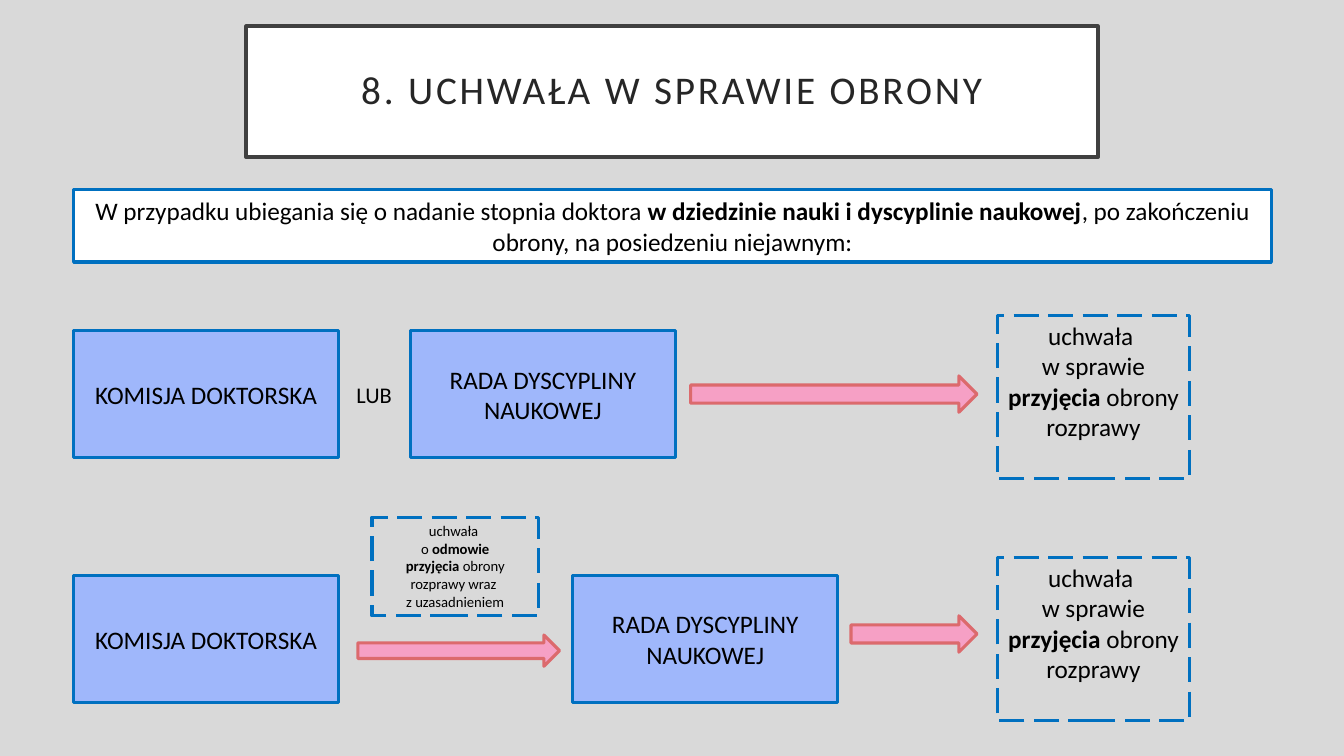
from dataclasses import dataclass

from pptx import Presentation
from pptx.dml.color import RGBColor
from pptx.enum.dml import MSO_LINE
from pptx.enum.shapes import MSO_SHAPE
from pptx.enum.text import MSO_ANCHOR, MSO_AUTO_SIZE, PP_ALIGN
from pptx.util import Inches, Pt

RECT = MSO_SHAPE.RECTANGLE
ARROW = MSO_SHAPE.RIGHT_ARROW
LONG_DASH = MSO_LINE.LONG_DASH
TOP = MSO_ANCHOR.TOP
MIDDLE = MSO_ANCHOR.MIDDLE
CENTER = PP_ALIGN.CENTER
NO_AUTOFIT = MSO_AUTO_SIZE.NONE


@dataclass(frozen=True)
class Theme:
    font: str = "Calibri"
    background: str = "D9D9D9"
    white: str = "FFFFFF"
    black: str = "000000"
    title_text: str = "262626"
    title_line: str = "404040"
    blue: str = "0070C0"
    body_fill: str = "9FB7FB"
    arrow_fill: str = "F6A0C5"
    arrow_line: str = "DC6A6D"
    title_size: float = 28
    body_size: float = 18
    label_size: float = 16
    small_size: float = 10.5
    title_width: float = 2.5
    line_width: float = 2.25


@dataclass(frozen=True)
class Run:
    text: str
    bold: bool = False


Paragraphs = tuple[tuple[Run, ...], ...]
THEME = Theme()


@dataclass(frozen=True)
class Box:
    left: float
    top: float
    width: float
    height: float
    text: Paragraphs = ()
    fill: str | None = None
    line: str | None = THEME.blue
    size: float = THEME.body_size
    anchor: MSO_ANCHOR = MIDDLE
    dashed: bool = False
    kind: MSO_SHAPE = RECT


def body(left: float, top: float, name: str) -> Box:
    return Box(left, top, 2.63, 1.26, ((Run(name),),), THEME.body_fill)


def resolution(left: float, top: float, width: float, height: float,
               text: Paragraphs, size: float = THEME.body_size) -> Box:
    return Box(left, top, width, height, text, size=size, anchor=TOP, dashed=True)


def arrow(left: float, top: float, width: float, height: float) -> Box:
    return Box(left, top, width, height, fill=THEME.arrow_fill,
               line=THEME.arrow_line, kind=ARROW)


TITLE = "8. UCHWAŁA W SPRAWIE OBRONY"
COMMITTEE = "KOMISJA DOKTORSKA"
COUNCIL = "RADA DYSCYPLINY NAUKOWEJ"
INTRO: Paragraphs = ((
    Run("W przypadku ubiegania się o nadanie stopnia doktora "),
    Run("w dziedzinie nauki i dyscyplinie naukowej", True),
    Run(", po zakończeniu obrony, na posiedzeniu niejawnym:"),
),)
ACCEPTANCE: Paragraphs = (
    (Run("uchwała "),),
    (Run("w sprawie"),),
    (Run("przyjęcia", True), Run(" obrony rozprawy")),
)
REFUSAL: Paragraphs = (
    (Run("uchwała "),),
    (Run("o "), Run("odmowie", True)),
    (Run("przyjęcia", True), Run(" obrony rozprawy wraz ")),
    (Run("z uzasadnieniem"),),
)
ROW_1, ROW_2 = 3.28, 5.71
COMMITTEE_LEFT, RESOLUTION_LEFT = 0.73, 9.89

BOXES = (
    Box(COMMITTEE_LEFT, 1.88, 11.88, 0.72, INTRO, THEME.white),
    body(COMMITTEE_LEFT, ROW_1, COMMITTEE),
    Box(3.35, 3.73, 0.72, 0.37, ((Run("LUB"),),), line=None,
        size=THEME.label_size, anchor=TOP),
    body(4.07, ROW_1, COUNCIL),
    arrow(6.85, 3.73, 2.84, 0.36),
    resolution(RESOLUTION_LEFT, 3.13, 1.91, 1.62, ACCEPTANCE),
    body(COMMITTEE_LEFT, ROW_2, COMMITTEE),
    resolution(3.69, 5.13, 1.65, 0.98, REFUSAL, THEME.small_size),
    arrow(3.55, 6.3, 2, 0.31),
    body(5.68, ROW_2, COUNCIL),
    arrow(8.44, 6.11, 1.25, 0.36),
    resolution(RESOLUTION_LEFT, 5.53, 1.91, 1.62, ACCEPTANCE),
)


def color(value: str) -> RGBColor:
    return RGBColor.from_string(value)


def paint(sp, fill: str | None, line: str, width: float) -> None:
    if fill:
        sp.fill.solid()
        sp.fill.fore_color.rgb = color(fill)
    else:
        sp.fill.background()
    sp.line.color.rgb = color(line)
    sp.line.width = Pt(width)


def write(tf, paragraphs: Paragraphs, size: float, ink: str, anchor: MSO_ANCHOR) -> None:
    tf.word_wrap = True
    tf.auto_size = NO_AUTOFIT
    tf.vertical_anchor = anchor
    for i, runs in enumerate(paragraphs):
        p = tf.add_paragraph() if i else tf.paragraphs[0]
        p.alignment = CENTER
        for run in runs:
            r = p.add_run()
            r.text = run.text
            r.font.name = THEME.font
            r.font.size = Pt(size)
            r.font.bold = run.bold
            r.font.color.rgb = color(ink)


def draw_title(s) -> None:
    sp = s.shapes.title
    sp.left, sp.top = Inches(2.44), Inches(0.26)
    sp.width, sp.height = Inches(8.45), Inches(1.3)
    paint(sp, THEME.white, THEME.title_line, THEME.title_width)
    tf = sp.text_frame
    tf.margin_left = tf.margin_right = tf.margin_top = tf.margin_bottom = Inches(0.2)
    write(tf, ((Run(TITLE),),), THEME.title_size, THEME.title_text, MIDDLE)
    p = tf.paragraphs[0]
    p.line_spacing = 0.9
    p.runs[0].font._element.set("spc", "200")


def draw_box(s, box: Box) -> None:
    frame = [Inches(v) for v in (box.left, box.top, box.width, box.height)]
    if box.line is None:
        sp = s.shapes.add_textbox(*frame)
    else:
        sp = s.shapes.add_shape(box.kind, *frame)
        sp.shadow.inherit = False
        paint(sp, box.fill, box.line, THEME.line_width)
        if box.dashed:
            sp.line.dash_style = LONG_DASH
    if box.text:
        write(sp.text_frame, box.text, box.size, THEME.black, box.anchor)


def main() -> None:
    prs = Presentation()
    prs.slide_width, prs.slide_height = Inches(13.33), Inches(7.5)
    s = prs.slides.add_slide(prs.slide_layouts[5])
    s.background.fill.solid()
    s.background.fill.fore_color.rgb = color(THEME.background)
    draw_title(s)
    for box in BOXES:
        draw_box(s, box)
    prs.save("out.pptx")


if __name__ == "__main__":
    main()
